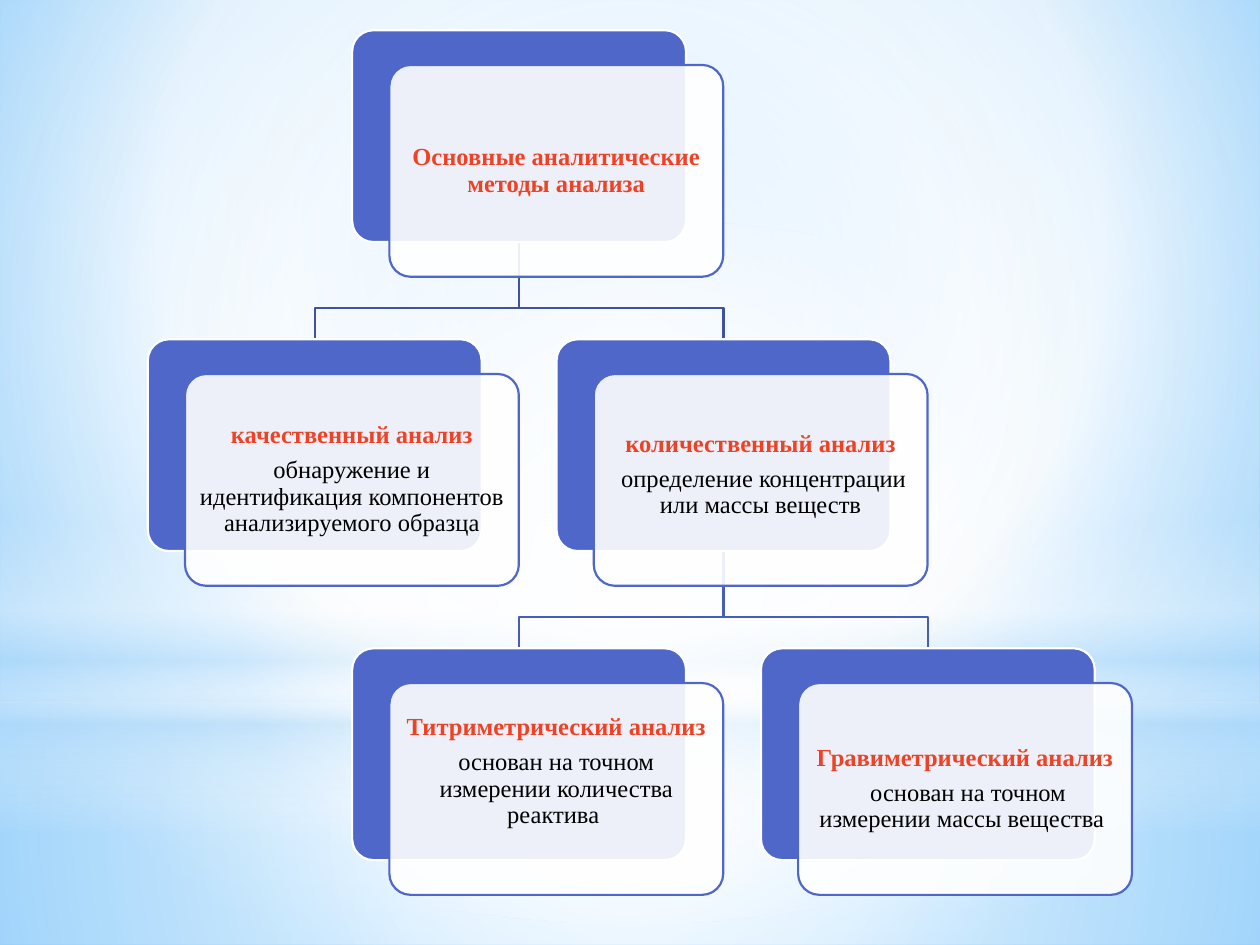
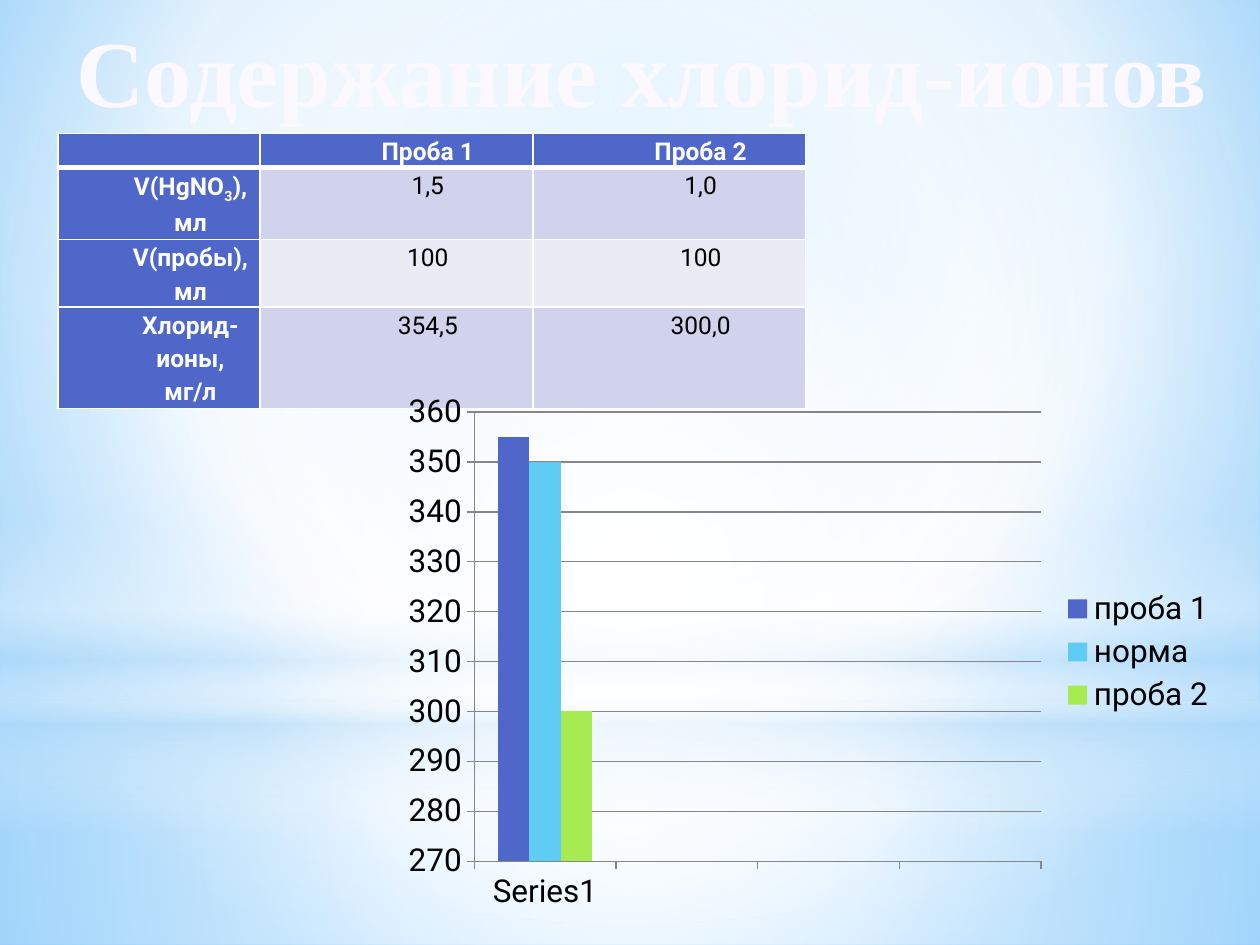
from lxml import etree
from pptx import Presentation
from pptx.chart.data import CategoryChartData
from pptx.dml.color import RGBColor
from pptx.enum.chart import XL_CHART_TYPE as ChartType
from pptx.enum.chart import XL_LEGEND_POSITION as LegendPosition
from pptx.enum.shapes import MSO_SHAPE as Preset
from pptx.enum.text import MSO_ANCHOR as Anchor
from pptx.enum.text import PP_ALIGN as Align
from pptx.oxml.ns import qn
from pptx.util import Cm, Pt

WHITE = RGBColor(0xFF, 0xFF, 0xFF)
BLACK = RGBColor(0, 0, 0)
SKY = RGBColor(0xB4, 0xDC, 0xFA)
SKY_CORE = RGBColor(0x9E, 0xD5, 0xFF)
SKY_EDGE = RGBColor(0x5B, 0xB9, 0xFF)
BLUE = RGBColor(0x4E, 0x67, 0xC8)
BLUE_DARK = RGBColor(0x3E, 0x52, 0xA0)
BLUE_MID = RGBColor(0x47, 0x5D, 0xB6)
CYAN = RGBColor(0x5E, 0xCC, 0xF3)
LIME = RGBColor(0xA7, 0xEA, 0x52)
RED = RGBColor(0xF1, 0x41, 0x24)
TITLE_COLOR = RGBColor(0xFB, 0xF9, 0xFF)
BAND_DARK = RGBColor(0xD0, 0xD3, 0xEB)
BAND_LIGHT = RGBColor(0xE9, 0xEB, 0xF5)
GRID = RGBColor(0x86, 0x86, 0x86)

SERIF, SANS = "Times New Roman", "Roboto"
PAGE_WIDTH, PAGE_HEIGHT = Cm(25.4), Cm(19.05)
CENTER = (50, 50, 50, 50)

CARD_WIDTH, CARD_HEIGHT = Cm(6.73), Cm(4.27)
CARD_INSET = Cm(0.14)
ELBOW_DROP = Cm(1.33)

METHODS = [
    (1, 0, "Основные аналитические методы анализа", "", 0),
    (0, 1, "качественный анализ",
     "обнаружение и идентификация компонентов анализируемого образца", 0),
    (2, 1, "количественный анализ",
     " определение концентрации или массы веществ", 0.2),
    (1, 2, "Титриметрический анализ",
     "основан на точном измерении количества реактива ", 0.69),
    (3, 2, "Гравиметрический анализ",
     " основан на точном измерении массы вещества ", 0),
]
BRANCHES = [
    ((2, 1), (3, 2), BLUE_MID),
    ((2, 1), (1, 2), BLUE_MID),
    ((1, 0), (2, 1), BLUE_DARK),
    ((1, 0), (0, 1), BLUE_DARK),
]
SAMPLES = [
    ["", "Проба 1", "Проба 2"],
    ["V(HgNO|3|),мл", "1,5", "1,0"],
    ["V(пробы), мл", "100", "100"],
    ["Хлорид-ионы, мг/л", "354,5", "300,0"],
]
CHLORIDES = [("проба 1", 355, BLUE), ("норма", 350, CYAN), ("проба 2", 300, LIME)]


def set_alpha(color_element, percent):
    etree.SubElement(color_element, qn("a:alpha"), val=str(percent * 1000))


def set_gradient(properties, stops, focus=None):
    gradient = etree.Element(qn("a:gradFill"), rotWithShape="1")
    stop_list = etree.SubElement(gradient, qn("a:gsLst"))
    for position, color, alpha in stops:
        stop = etree.SubElement(stop_list, qn("a:gs"), pos=str(position * 1000))
        set_alpha(etree.SubElement(stop, qn("a:srgbClr"), val=str(color)), alpha)
    if focus:
        route = etree.SubElement(gradient, qn("a:path"))
        route.set("path", "circle")
        sides = {side: str(value * 1000) for side, value in zip("ltrb", focus)}
        etree.SubElement(route, qn("a:fillToRect"), **sides)
    else:
        etree.SubElement(gradient, qn("a:lin"), ang="5400000", scaled="0")
    properties.replace(properties.find(qn("a:solidFill")), gradient)


def add_plain_shape(page, preset, left, top, width, height, fill):
    shape = page.shapes.add_shape(preset, left, top, width, height)
    shape.shadow.inherit = False
    shape.fill.solid()
    shape.fill.fore_color.rgb = fill
    shape.line.fill.background()
    return shape


def add_glow(page, preset, top, height, stops, focus=None):
    glow = add_plain_shape(page, preset, 0, Cm(top), PAGE_WIDTH, Cm(height), WHITE)
    set_gradient(glow.element.spPr, stops, focus)


def add_sky_page(deck):
    page = deck.slides.add_slide(deck.slide_layouts[6])
    page.background.fill.solid()
    set_gradient(next(page.element.iter(qn("p:bgPr"))),
                 [(0, SKY_CORE, 100), (60, WHITE, 100), (100, SKY_EDGE, 100)],
                 (20, 10, 20, 60))
    add_glow(page, Preset.RECTANGLE, 14.17, 4.88,
             [(0, WHITE, 91), (37, WHITE, 76), (100, SKY, 79)], CENTER)
    add_glow(page, Preset.RECTANGLE, 0, 14.17,
             [(0, WHITE, 89), (48, WHITE, 62), (100, SKY, 79)], CENTER)
    add_glow(page, Preset.RECTANGLE, 10.46, 6.35,
             [(0, WHITE, 0), (29, WHITE, 30), (45, SKY, 40),
              (55, WHITE, 26), (65, SKY, 60), (100, WHITE, 0)])
    add_glow(page, Preset.OVAL, 4.45, 14.17,
             [(0, WHITE, 100), (56, WHITE, 0)], CENTER)
    return page


def style_font(font, name, size, color, bold=False):
    font.name, font.size, font.bold = name, Pt(size), bold
    font.color.rgb = color


def card_corner(column, row):
    return Cm(2.98 + 4.12 * column), Cm(0.61 + 6.23 * row)


def add_branch(page, parent, child, color):
    (parent_left, parent_top), (child_left, child_top) = card_corner(*parent), card_corner(*child)
    start_x, end_x = parent_left + CARD_WIDTH // 2, child_left + CARD_WIDTH // 2
    start_y = parent_top + CARD_HEIGHT
    bend_y = start_y + ELBOW_DROP
    builder = page.shapes.build_freeform(start_x, start_y)
    builder.add_line_segments([(start_x, bend_y), (end_x, bend_y), (end_x, child_top)],
                              close=False)
    branch = builder.convert_to_shape()
    branch.shadow.inherit = False
    branch.fill.background()
    branch.line.color.rgb = color
    branch.line.width = Pt(1.25)


def add_panel(page, left, top, fill, line):
    panel = add_plain_shape(page, Preset.ROUNDED_RECTANGLE, left, top,
                            CARD_WIDTH, CARD_HEIGHT, fill)
    panel.adjustments[0] = 0.1
    panel.line.color.rgb = line
    panel.line.width = Pt(1.25)
    return panel


def add_method_card(page, column, row, name, description, lift):
    left, top = card_corner(column, row)
    add_panel(page, left, top, BLUE, WHITE)
    front = add_panel(page, left + Cm(0.75), top + Cm(0.7), WHITE, BLUE)
    set_alpha(front.element.spPr.find(qn("a:solidFill"))[0], 90)
    frame = front.text_frame
    frame.word_wrap = True
    frame.vertical_anchor = Anchor.MIDDLE
    frame.margin_left = frame.margin_right = frame.margin_top = CARD_INSET
    frame.margin_bottom = CARD_INSET + Cm(lift)
    frame.text = f"{name}\n{description}" if description else name
    for para, color in zip(frame.paragraphs, (RED, BLACK)):
        para.alignment = Align.CENTER
        para.line_spacing = 0.9
        para.space_after = Pt(4.9)
        style_font(para.font, SERIF, 14, color, color == RED)


def add_title(page, text):
    box = page.shapes.add_textbox(Cm(0.59), Cm(0.26), Cm(24.7), Cm(2.2))
    frame = box.text_frame
    frame.word_wrap = False
    frame.margin_left = frame.margin_right = frame.margin_top = frame.margin_bottom = 0
    frame.text = text
    para = frame.paragraphs[0]
    para.alignment = Align.CENTER
    style_font(para.font, SERIF, 54, TITLE_COLOR, True)


def set_borders(cell, special_widths):
    properties = cell._tc.get_or_add_tcPr()
    for side in "LRTB":
        width = Pt(special_widths.get(side, 1))
        line = etree.SubElement(properties, qn(f"a:ln{side}"), w=str(width))
        fill = etree.SubElement(line, qn("a:solidFill"))
        etree.SubElement(fill, qn("a:srgbClr"), val=str(WHITE))


def fill_cell(cell, text, row, column):
    is_header = row == 0 or column == 0
    set_borders(cell, {0: {"B": 3}, 1: {"T": 3}}.get(row, {}))
    cell.fill.solid()
    cell.fill.fore_color.rgb = BLUE if is_header else BAND_DARK if row % 2 else BAND_LIGHT
    cell.margin_left = cell.margin_right = Cm(0.18)
    cell.margin_top = cell.margin_bottom = 0
    para = cell.text_frame.paragraphs[0]
    if not text:
        etree.SubElement(para._p, qn("a:endParaRPr"), sz="1400")
        return
    para.alignment = Align.CENTER
    para.line_spacing = 1.15
    properties = para._p.get_or_add_pPr()
    properties.set("marL", str(Cm(1.27)))
    properties.set("indent", "0")
    style_font(para.font, SANS, 14, WHITE if is_header else BLACK, is_header)
    for index, part in enumerate(text.split("|")):
        span = para.add_run()
        span.text = part
        if index == 1:
            span.font._element.set("baseline", "-25000")


def add_sample_table(page):
    frame = page.shapes.add_table(len(SAMPLES), len(SAMPLES[0]),
                                  Cm(1.17), Cm(2.69), Cm(15.07), Cm(4.95))
    table = frame.table
    for column, width in zip(table.columns, (4.07, 5.5, 5.5)):
        column.width = Cm(width)
    for line, height in zip(table.rows, (0.61, 1.24, 1.24, 1.86)):
        line.height = Cm(height)
    for row, texts in enumerate(SAMPLES):
        for column, text in enumerate(texts):
            fill_cell(table.cell(row, column), text, row, column)


def add_chloride_chart(page):
    data = CategoryChartData()
    data.categories = ["Series1", "", "", ""]
    for name, value, _ in CHLORIDES:
        data.add_series(name, [value, None, None, None])
    chart = page.shapes.add_chart(ChartType.COLUMN_CLUSTERED, Cm(7.9), Cm(7.72),
                                  Cm(16.87), Cm(10.85), data).chart
    style_font(chart.font, SANS, 18, BLACK)
    chart.has_title = False
    chart.has_legend = True
    chart.legend.position = LegendPosition.RIGHT
    chart.legend.include_in_layout = False
    plot = chart.plots[0]
    plot.gap_width = 150
    plot.overlap = 0
    plot.vary_by_categories = False
    for series, (_, _, color) in zip(plot.series, CHLORIDES):
        series.format.fill.solid()
        series.format.fill.fore_color.rgb = color
    scale = chart.value_axis
    scale.minimum_scale, scale.maximum_scale, scale.major_unit = 270, 360, 10
    scale.has_major_gridlines = True
    for lined in (scale, scale.major_gridlines, chart.category_axis):
        lined.format.line.color.rgb = GRID
        lined.format.line.width = Pt(0.75)


def main():
    deck = Presentation()
    deck.slide_width, deck.slide_height = PAGE_WIDTH, PAGE_HEIGHT

    methods_page = add_sky_page(deck)
    for branch in BRANCHES:
        add_branch(methods_page, *branch)
    for method in METHODS:
        add_method_card(methods_page, *method)

    chloride_page = add_sky_page(deck)
    add_title(chloride_page, "Содержание хлорид-ионов")
    add_sample_table(chloride_page)
    add_chloride_chart(chloride_page)

    deck.save("out.pptx")


if __name__ == "__main__":
    main()
